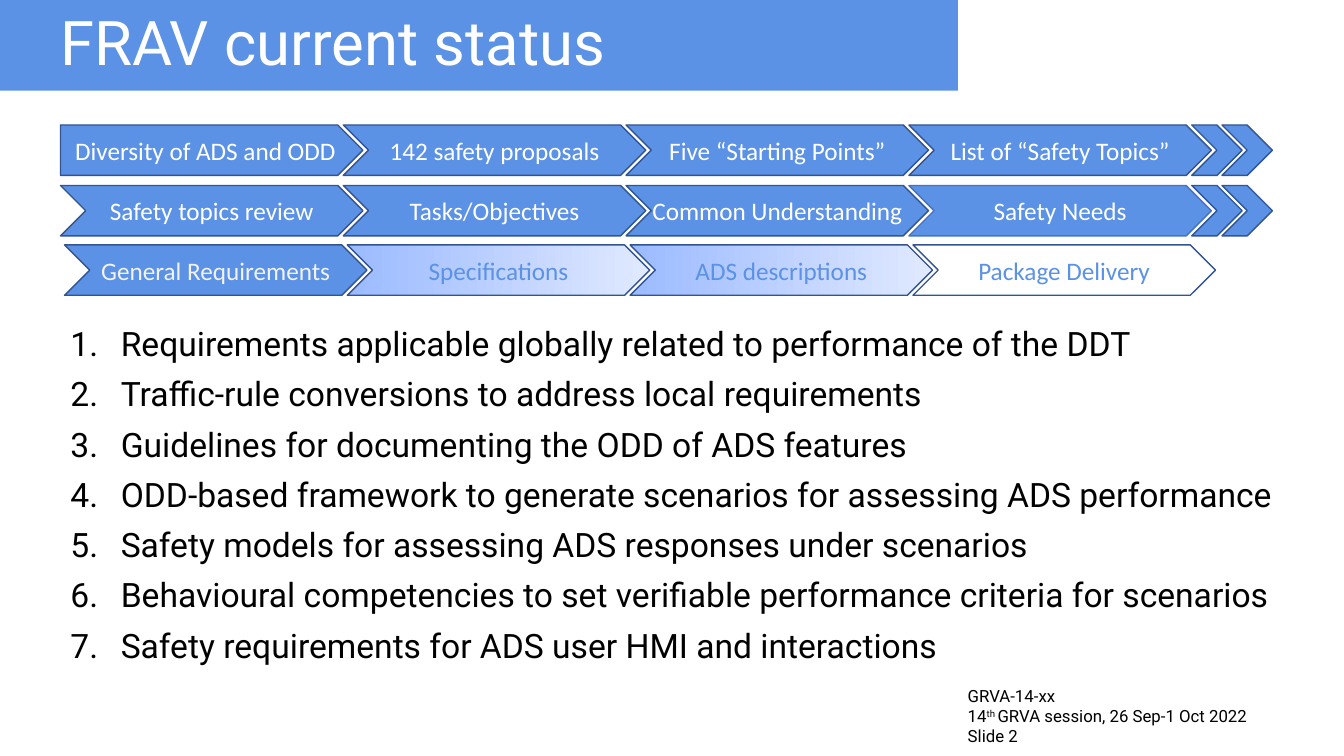
"""Build the FRAV current status slide."""
from dataclasses import dataclass

from lxml.etree import SubElement
from pptx import Presentation
from pptx.dml.color import RGBColor
from pptx.enum.shapes import MSO_SHAPE
from pptx.enum.text import MSO_ANCHOR, PP_ALIGN
from pptx.oxml.ns import qn
from pptx.shapes.autoshape import Shape
from pptx.slide import Slide
from pptx.text.text import TextFrame, _Paragraph
from pptx.util import Inches, Pt

BLUE = RGBColor(0x5B, 0x92, 0xE5)
NAVY = RGBColor(0x32, 0x54, 0x91)
ROYAL = RGBColor(0x44, 0x72, 0xC4)
PALE = RGBColor(0xF2, 0xF2, 0xF2)
FADE = (RGBColor(0x9B, 0xBA, 0xFF), RGBColor(0xE0, 0xE9, 0xFF))
WHITE = RGBColor(0xFF, 0xFF, 0xFF)
BLACK = RGBColor(0, 0, 0)

TITLE = {"size": Pt(44), "name": "Roboto", "color": WHITE}
BODY = {"size": Pt(24), "name": "Roboto", "color": BLACK}
NOTE = {"size": Pt(12), "name": "Roboto", "color": BLACK}
LABEL = {"size": Pt(18), "name": "Calibri"}

STEP, WIDE, HIGH, TIP = 2.805, 3, 0.5, 0.3


@dataclass
class Stage:
    """One arrow in a row of stages."""
    text: str
    fill: RGBColor | tuple[RGBColor, RGBColor] = BLUE
    ink: RGBColor = WHITE
    line: RGBColor = NAVY
    kind: MSO_SHAPE = MSO_SHAPE.CHEVRON


@dataclass
class Row:
    """A row of stages, with small arrows at its end."""
    left: float
    top: float
    stages: list[Stage]
    tips: int = 0


ROWS = [
    Row(0.6, 1.24, [
        Stage("Diversity of ADS and ODD", kind=MSO_SHAPE.PENTAGON),
        Stage("142 safety proposals"),
        Stage("Five “Starting Points”"),
        Stage("List of “Safety Topics”"),
    ], 2),
    Row(0.6, 1.84, [
        Stage("Safety topics review"),
        Stage("Tasks/Objectives"),
        Stage("Common Understanding"),
        Stage("Safety Needs", line=ROYAL),
    ], 2),
    Row(0.64, 2.43, [
        Stage("General Requirements", ink=PALE),
        Stage("Specifications", FADE, BLUE),
        Stage("ADS descriptions", FADE, BLUE),
        Stage("Package Delivery", WHITE, BLUE),
    ]),
]

ITEMS = [
    "Requirements applicable globally related to performance of the DDT",
    "Traffic-rule conversions to address local requirements",
    "Guidelines for documenting the ODD of ADS features",
    "ODD-based framework to generate scenarios for assessing ADS performance",
    "Safety models for assessing ADS responses under scenarios",
    "Behavioural competencies to set verifiable performance criteria for scenarios",
    "Safety requirements for ADS user HMI and interactions",
]

NOTES = [
    [("GRVA-14-xx", False)],
    [("14", False), ("th ", True), ("GRVA session, 26 Sep-1 Oct 2022", False)],
    [("Slide 2", False)],
]


def add_run(para: _Paragraph, text: str, style: dict, high: bool = False) -> None:
    """Add a run of text in the given style."""
    run = para.add_run()
    run.text = text
    for key, value in style.items():
        if key == "color":
            run.font.color.rgb = value
        else:
            setattr(run.font, key, value)
    if high:
        run.font._element.set("baseline", "30000")


def next_para(frame: TextFrame, index: int) -> _Paragraph:
    """Return the first paragraph, or add one."""
    return frame.add_paragraph() if index else frame.paragraphs[0]


def add_box(slide: Slide, *place: float) -> TextFrame:
    """Add a text box that wraps."""
    frame = slide.shapes.add_textbox(*map(Inches, place)).text_frame
    frame.word_wrap = True
    return frame


def add_shape(slide: Slide, kind: MSO_SHAPE, *place: float) -> Shape:
    """Add a flat blue shape."""
    shape = slide.shapes.add_shape(kind, *map(Inches, place))
    shape.shadow.inherit = False
    shape.fill.solid()
    shape.fill.fore_color.rgb = BLUE
    shape.line.color.rgb = NAVY
    shape.line.width = Pt(1)
    return shape


def add_stage(slide: Slide, stage: Stage, left: float, top: float) -> None:
    """Draw one stage and its label."""
    shape = add_shape(slide, stage.kind, left, top, WIDE, HIGH)
    shape.line.color.rgb = stage.line
    if stage.fill == FADE:
        shape.fill.gradient()
        shape.fill.gradient_angle = 0
        for stop, shade in zip(shape.fill.gradient_stops, FADE):
            stop.color.rgb = shade
    else:
        shape.fill.fore_color.rgb = stage.fill
    frame = shape.text_frame
    setup = {"margin_left": 0, "margin_right": 0, "word_wrap": True,
             "vertical_anchor": MSO_ANCHOR.MIDDLE}
    for key, value in setup.items():
        setattr(frame, key, value)
    para = frame.paragraphs[0]
    para.alignment = PP_ALIGN.CENTER
    add_run(para, stage.text, LABEL | {"color": stage.ink})


def add_row(slide: Slide, row: Row) -> None:
    """Draw a row of stages at equal steps."""
    for index, stage in enumerate(row.stages):
        add_stage(slide, stage, row.left + index * STEP, row.top)
    end = row.left + len(row.stages) * STEP
    for index in range(row.tips):
        add_shape(slide, MSO_SHAPE.CHEVRON, end + index * TIP, row.top, HIGH, HIGH)


def add_list(slide: Slide) -> None:
    """Write the numbered list."""
    frame = add_box(slide, 0.6, 3.2, 12.24, 3.56)
    for index, item in enumerate(ITEMS):
        para = next_para(frame, index)
        para.line_spacing = 0.9
        para.space_before = Pt(10 if index else 0)
        props = para._p.get_or_add_pPr()
        props.set("marL", str(Inches(0.5)))
        props.set("indent", str(-Inches(0.5)))
        SubElement(props, qn("a:buFont"), typeface="+mj-lt")
        SubElement(props, qn("a:buAutoNum"), type="arabicPeriod")
        add_run(para, item, BODY)


def main() -> None:
    """Build and save the slide."""
    deck = Presentation()
    deck.slide_width, deck.slide_height = Inches(13.33), Inches(7.5)
    slide = deck.slides.add_slide(deck.slide_layouts[6])
    band = add_shape(slide, MSO_SHAPE.RECTANGLE, 0, 0, 9.5, 0.9)
    band.line.fill.background()
    notes = add_box(slide, 9.5, 6.75, 3.33, 0.71)
    for index, parts in enumerate(NOTES):
        para = next_para(notes, index)
        for text, high in parts:
            add_run(para, text, NOTE, high)
    add_list(slide)
    title = add_box(slide, 0.5, 0.05, 8.8, 0.8)
    title.vertical_anchor = MSO_ANCHOR.MIDDLE
    title.paragraphs[0].line_spacing = 0.9
    add_run(title.paragraphs[0], "FRAV current status", TITLE)
    for row in ROWS:
        add_row(slide, row)
    deck.save("out.pptx")


if __name__ == "__main__":
    main()
